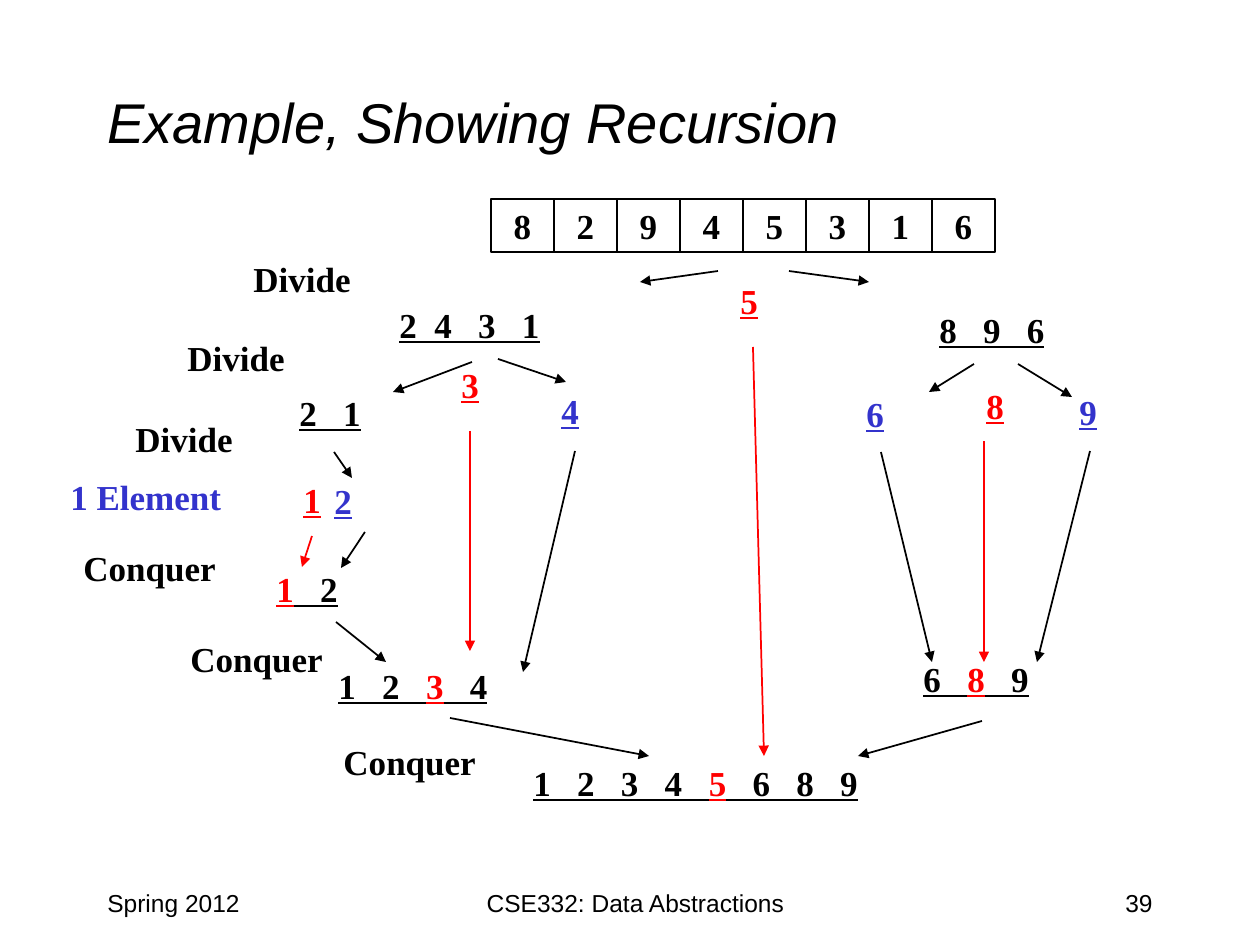
from dataclasses import dataclass
from typing import NamedTuple

import pptx
import pptx.dml.color
import pptx.enum.shapes
import pptx.enum.text
import pptx.oxml
import pptx.oxml.ns
import pptx.util

ALIGN = pptx.enum.text.PP_ALIGN
ANCHOR = pptx.enum.text.MSO_ANCHOR
RGB = pptx.dml.color.RGBColor
PX_PER_INCH = 126


@dataclass(frozen=True)
class Theme:
    black: RGB = RGB(0x00, 0x00, 0x00)
    pivot: RGB = RGB(0xFF, 0x00, 0x00)
    single: RGB = RGB(0x33, 0x33, 0xCC)
    heading_font: str = "Arial"
    body_font: str = "Times New Roman"
    title_size: int = 32
    body_size: int = 20
    footer_size: int = 14
    arrow_width: float = 1
    cell_width: float = 0.75


THEME = Theme()
LABEL_HEIGHT = 55
DIGIT_WIDTH = 43


class Footer(NamedTuple):
    text: str
    left: int
    width: int
    alignment: ALIGN


class Label(NamedTuple):
    text: str
    left: int
    top: int
    width: int
    color: RGB = THEME.black


class Numbers(NamedTuple):
    """An underlined group of numbers; the pivot digit is red."""
    text: str
    left: int
    top: int
    width: int = DIGIT_WIDTH
    pivot: str = ""
    color: RGB = THEME.black


class Arrow(NamedTuple):
    start_x: int
    start_y: int
    end_x: int
    end_y: int
    color: RGB = THEME.black


FOOTERS = [
    Footer("Spring 2012", 95, 262, ALIGN.LEFT),
    Footer("CSE332: Data Abstractions", 399, 473, ALIGN.CENTER),
    Footer("39", 903, 262, ALIGN.RIGHT),
]

ARRAY = "82945316"
ARRAY_LEFT, ARRAY_TOP, CELL_WIDTH, CELL_HEIGHT = 491, 199, 63, 53

STEPS = [
    Label("Divide", 241, 251, 123),
    Label("Divide", 175, 330, 123),
    Label("Divide", 123, 411, 123),
    Label("1 Element", 58, 469, 178, THEME.single),
    Label("Conquer", 71, 540, 159),
    Label("Conquer", 178, 631, 159),
    Label("Conquer", 331, 734, 159),
]

NUMBERS = [
    # Dividing
    Numbers("5", 728, 273, pivot="5"),
    Numbers("2  4   3   1", 387, 297, 168),
    Numbers("8   9   6", 927, 302, 133),
    Numbers("3", 449, 357, pivot="3"),
    Numbers("8", 974, 378, pivot="8"),
    Numbers("2   1", 287, 385, 88),
    Numbers("4", 549, 383, color=THEME.single),
    Numbers("6", 854, 386, color=THEME.single),
    Numbers("9", 1067, 384, color=THEME.single),
    Numbers("1", 291, 472, pivot="1"),
    Numbers("2", 322, 473, color=THEME.single),
    # Conquering
    Numbers("1   2", 264, 561, 88, pivot="1"),
    Numbers("1   2   3   4", 326, 658, 178, pivot="3"),
    Numbers("6   8   9", 911, 651, 133, pivot="8"),
    Numbers("1   2   3   4   5   6   8   9", 521, 755, 360, pivot="5"),
]

ARROWS = [
    # Dividing
    Arrow(718, 271, 640, 282),
    Arrow(789, 271, 869, 282),
    Arrow(472, 362, 393, 392),
    Arrow(498, 359, 566, 382),
    Arrow(974, 364, 929, 392),
    Arrow(1018, 364, 1072, 397),
    Arrow(334, 452, 352, 478),
    # Conquering
    Arrow(365, 532, 341, 568),
    Arrow(336, 622, 386, 662),
    Arrow(575, 451, 523, 672),
    Arrow(881, 452, 932, 662),
    Arrow(1090, 451, 1037, 662),
    Arrow(450, 718, 649, 756),
    Arrow(982, 721, 858, 756),
    # Pivots
    Arrow(312, 536, 302, 567, THEME.pivot),
    Arrow(470, 431, 470, 651, THEME.pivot),
    Arrow(753, 347, 764, 756, THEME.pivot),
    Arrow(984, 441, 984, 662, THEME.pivot),
]


def px(length: int) -> pptx.util.Emu:
    return pptx.util.Emu(round(length * 914400 / PX_PER_INCH))


def set_font(font, name: str, size: int, color: RGB | None = THEME.black) -> None:
    font.name = name
    font.size = pptx.util.Pt(size)
    if color is not None:
        font.color.rgb = color


def add_text_box(slide, left: int, top: int, width: int, height: int, wrap: bool):
    """Add an empty text box and return its frame and first paragraph."""
    frame = slide.shapes.add_textbox(px(left), px(top), px(width), px(height)).text_frame
    frame.word_wrap = wrap
    return frame, frame.paragraphs[0]


def add_title(slide, text: str) -> None:
    frame, paragraph = add_text_box(slide, 95, 42, 1071, 158, True)
    frame.vertical_anchor = ANCHOR.MIDDLE
    paragraph.text = text
    set_font(paragraph.font, THEME.heading_font, THEME.title_size)
    paragraph.font.italic = True


def add_footer(slide, footer: Footer) -> None:
    _, paragraph = add_text_box(slide, footer.left, 882, footer.width, 63, True)
    paragraph.text = footer.text
    paragraph.alignment = footer.alignment
    set_font(paragraph.font, THEME.heading_font, THEME.footer_size)


def add_label(slide, label: Label) -> None:
    _, paragraph = add_text_box(slide, label.left, label.top, label.width, LABEL_HEIGHT, False)
    paragraph.text = label.text
    set_font(paragraph.font, THEME.body_font, THEME.body_size, label.color)
    paragraph.font.bold = True


def add_numbers(slide, numbers: Numbers) -> None:
    _, paragraph = add_text_box(
        slide, numbers.left, numbers.top, numbers.width, LABEL_HEIGHT, False)
    paragraph.alignment = ALIGN.LEFT
    set_font(paragraph.font, THEME.body_font, THEME.body_size, None)
    paragraph.font.bold = paragraph.font.underline = True
    parts = numbers.text.partition(numbers.pivot) if numbers.pivot else [numbers.text]
    for text in filter(None, parts):
        run = paragraph.add_run()
        run.text = text
        run.font.color.rgb = THEME.pivot if text == numbers.pivot else numbers.color


def add_cell(slide, index: int, value: str) -> None:
    cell = slide.shapes.add_shape(
        pptx.enum.shapes.MSO_SHAPE.RECTANGLE, px(ARRAY_LEFT + index * CELL_WIDTH),
        px(ARRAY_TOP), px(CELL_WIDTH), px(CELL_HEIGHT))
    cell.shadow.inherit = False
    cell.fill.background()
    cell.line.color.rgb = THEME.black
    cell.line.width = pptx.util.Pt(THEME.cell_width)
    cell.text_frame.word_wrap = False
    cell.text_frame.vertical_anchor = ANCHOR.MIDDLE
    paragraph = cell.text_frame.paragraphs[0]
    paragraph.text = value
    paragraph.alignment = ALIGN.CENTER
    set_font(paragraph.font, THEME.body_font, THEME.body_size)
    paragraph.font.bold = True


def add_arrow(slide, arrow: Arrow) -> None:
    connector = slide.shapes.add_connector(
        pptx.enum.shapes.MSO_CONNECTOR.STRAIGHT, px(arrow.start_x), px(arrow.start_y),
        px(arrow.end_x), px(arrow.end_y))
    connector.line.color.rgb = arrow.color
    connector.line.width = pptx.util.Pt(THEME.arrow_width)
    properties = connector._element.spPr
    head = pptx.oxml.parse_xml(f'<a:tailEnd {pptx.oxml.ns.nsdecls("a")} type="triangle"/>')
    properties.find(pptx.oxml.ns.qn("a:ln")).append(head)
    properties.append(pptx.oxml.parse_xml(f'<a:effectLst {pptx.oxml.ns.nsdecls("a")}/>'))


def main() -> None:
    presentation = pptx.Presentation()
    presentation.slide_width, presentation.slide_height = px(1260), px(945)
    slide = presentation.slides.add_slide(presentation.slide_layouts[6])
    add_title(slide, "Example, Showing Recursion")
    for index, value in enumerate(ARRAY):
        add_cell(slide, index, value)
    for draw, items in ((add_label, STEPS), (add_numbers, NUMBERS),
                        (add_arrow, ARROWS), (add_footer, FOOTERS)):
        for item in items:
            draw(slide, item)
    presentation.save("out.pptx")


if __name__ == "__main__":
    main()
